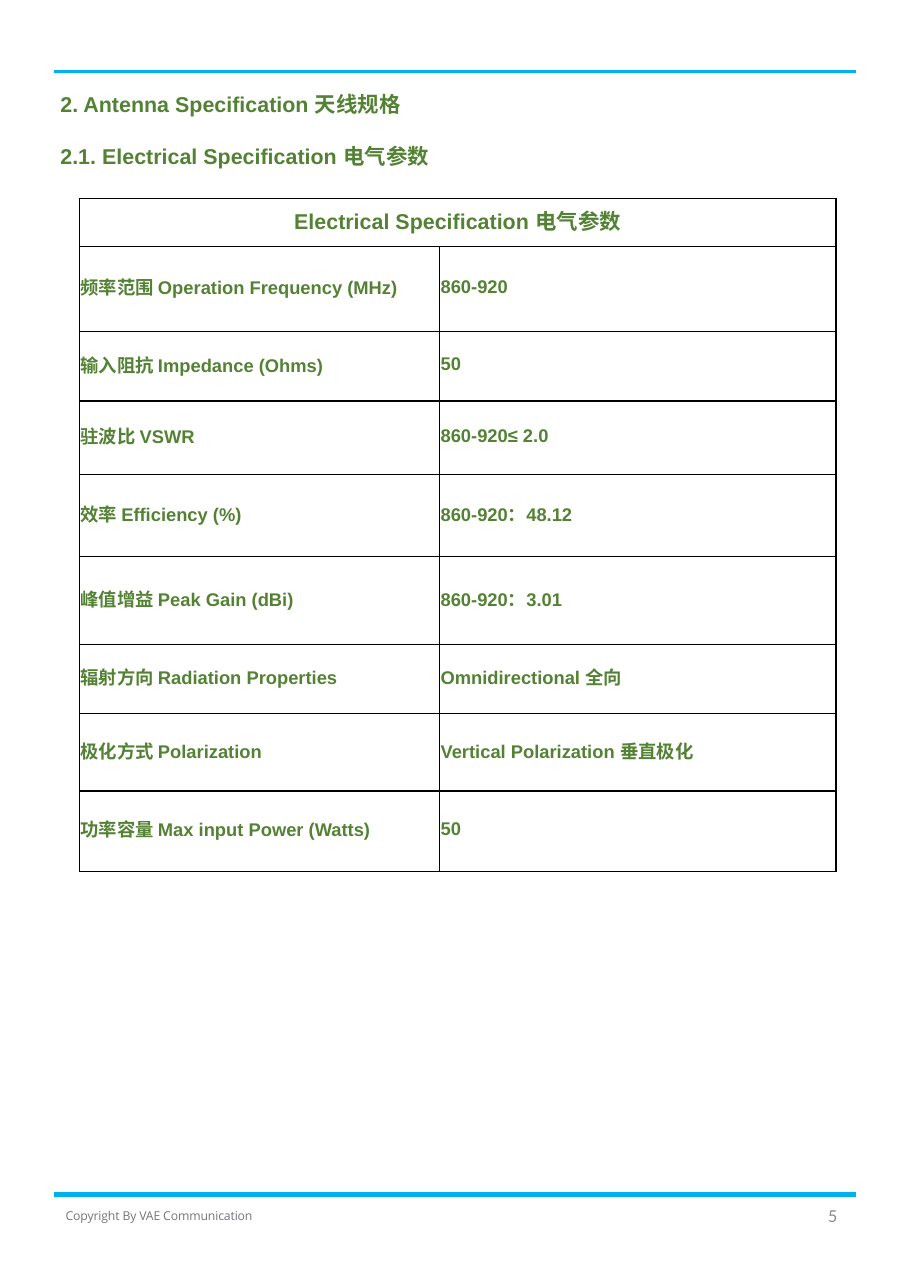
from dataclasses import dataclass

from lxml import etree
from pptx import Presentation
from pptx.dml.color import RGBColor
from pptx.enum.shapes import MSO_CONNECTOR
from pptx.enum.text import MSO_ANCHOR, PP_ALIGN
from pptx.oxml.ns import qn
from pptx.util import Inches, Pt

STRAIGHT = MSO_CONNECTOR.STRAIGHT
TOP, MIDDLE = MSO_ANCHOR.TOP, MSO_ANCHOR.MIDDLE
LEFT, CENTER, RIGHT = PP_ALIGN.LEFT, PP_ALIGN.CENTER, PP_ALIGN.RIGHT


@dataclass(frozen=True)
class TextStyle:
    font: str
    size: float
    color: str
    bold: bool = False
    spacing: float = 0


class Theme:
    rule_color = "00B0F0"
    border_color = "000000"
    border_width = 1
    heading = TextStyle("Arial", 14, "548235", bold=True)
    cell = TextStyle("Arial", 12, "548235", bold=True)
    copyright = TextStyle("Open Sans", 8, "75757C", spacing=-0.1)
    page_number = TextStyle("Calibri", 12, "8C8C8C")


TABLE_TITLE = "Electrical Specification 电气参数"
COLUMN_WIDTHS = (3.27, 3.6)
TITLE_HEIGHT = 0.44
# Row height, parameter, value
SPECIFICATIONS = (
    (0.77, "频率范围 Operation Frequency (MHz)", "860-920"),
    (0.63, "输入阻抗 Impedance (Ohms)", "50"),
    (0.67, "驻波比 VSWR", "860-920≤ 2.0"),
    (0.74, "效率 Efficiency (%)", "860-920：48.12"),
    (0.8, "峰值增益 Peak Gain (dBi)", "860-920：3.01"),
    (0.63, "辐射方向 Radiation Properties", "Omnidirectional 全向"),
    (0.7, "极化方式 Polarization", "Vertical Polarization 垂直极化"),
    (0.73, "功率容量 Max input Power (Watts)", "50"),
)


def write_text(text_frame, text, style, align=LEFT):
    paragraph = text_frame.paragraphs[0]
    paragraph.alignment = align
    run = paragraph.add_run()
    run.text = text
    run.font.name = style.font
    run.font.size = Pt(style.size)
    run.font.bold = style.bold
    run.font.color.rgb = RGBColor.from_string(style.color)
    if style.spacing:
        run._r.get_or_add_rPr().set("spc", str(round(style.spacing * 100)))


def add_text(slide, box, text, style, align=LEFT, anchor=TOP):
    shape = slide.shapes.add_textbox(*map(Inches, box))
    shape.text_frame.word_wrap = True
    shape.text_frame.vertical_anchor = anchor
    write_text(shape.text_frame, text, style, align)


def add_rule(slide, top, width):
    rule = slide.shapes.add_connector(
        STRAIGHT, Inches(0.49), Inches(top), Inches(7.77), Inches(top))
    rule.line.color.rgb = RGBColor.from_string(Theme.rule_color)
    rule.line.width = Pt(width)
    etree.SubElement(rule._element.spPr, qn("a:effectLst"))


def format_cell(cell):
    cell.margin_left = cell.margin_right = cell.margin_top = Inches(0.01)
    cell.margin_bottom = Inches(0.05)
    cell.vertical_anchor = MIDDLE
    properties = cell._tc.get_or_add_tcPr()
    for side in ("a:lnL", "a:lnR", "a:lnT", "a:lnB"):
        border = etree.SubElement(
            properties, qn(side), w=str(Pt(Theme.border_width)))
        fill = etree.SubElement(border, qn("a:solidFill"))
        etree.SubElement(fill, qn("a:srgbClr"), val=Theme.border_color)
    cell.fill.background()


def add_specification_table(slide, left, top):
    heights = [TITLE_HEIGHT] + [height for height, *_ in SPECIFICATIONS]
    table = slide.shapes.add_table(
        len(heights), len(COLUMN_WIDTHS), Inches(left), Inches(top),
        Inches(sum(COLUMN_WIDTHS)), Inches(sum(heights))).table
    table.first_row = table.horz_banding = False
    for column, width in zip(table.columns, COLUMN_WIDTHS):
        column.width = Inches(width)
    for row, height in zip(table.rows, heights):
        row.height = Inches(height)
    for cell in table.iter_cells():
        format_cell(cell)

    title = table.cell(0, 0)
    title.merge(table.cell(0, 1))
    write_text(title.text_frame, TABLE_TITLE, Theme.heading, CENTER)
    for row, (_, *texts) in enumerate(SPECIFICATIONS, start=1):
        for column, text in enumerate(texts):
            write_text(table.cell(row, column).text_frame, text, Theme.cell)


def main():
    presentation = Presentation()
    presentation.slide_width = Inches(8.27)
    presentation.slide_height = Inches(11.69)
    slide = presentation.slides.add_slide(presentation.slide_layouts[6])

    # Header and footer rules
    add_rule(slide, 0.65, 1.5)
    add_rule(slide, 10.84, 3)

    # Headings
    add_text(slide, (0.45, 0.78, 5.54, 0.34),
             "2. Antenna Specification 天线规格", Theme.heading)
    add_text(slide, (0.45, 1.25, 5.54, 0.34),
             "2.1. Electrical Specification 电气参数", Theme.heading)

    # Specification table
    add_specification_table(slide, 0.72, 1.8)

    # Footer
    add_text(slide, (0.27, 10.84, 2.35, 0.38),
             "Copyright By VAE Communication", Theme.copyright, CENTER, MIDDLE)
    add_text(slide, (5.94, 10.84, 1.76, 0.38),
             "5", Theme.page_number, RIGHT, MIDDLE)

    presentation.save("out.pptx")


if __name__ == "__main__":
    main()
